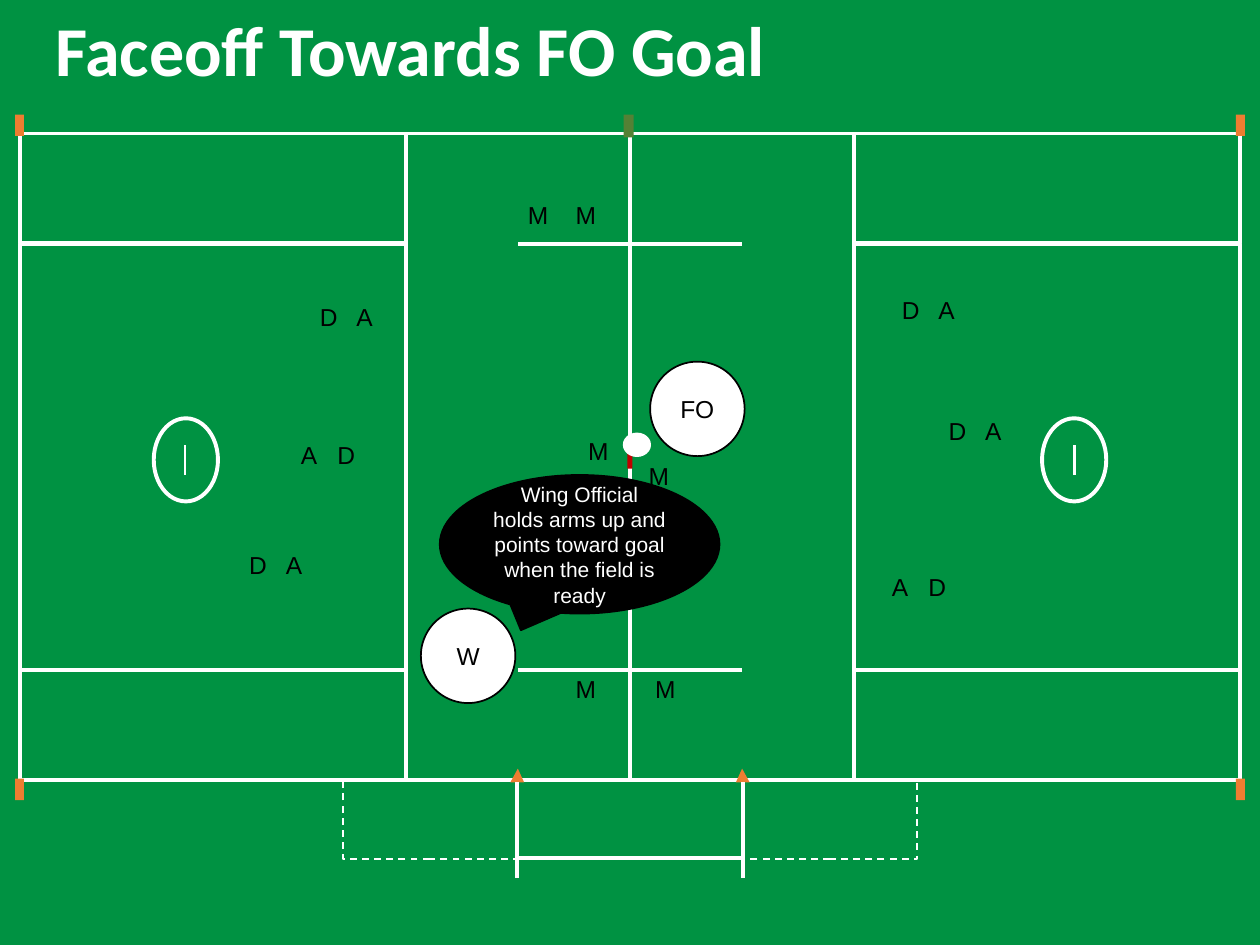
import dataclasses
import lxml.etree
import pptx
import pptx.dml.color
import pptx.enum.dml
import pptx.enum.shapes
import pptx.enum.text
import pptx.oxml.ns
import pptx.util

KIND = pptx.enum.shapes.MSO_SHAPE
ALIGN = pptx.enum.text.PP_ALIGN
ANCHOR = pptx.enum.text.MSO_ANCHOR
FIT = pptx.enum.text.MSO_AUTO_SIZE
DASH = pptx.enum.dml.MSO_LINE.DASH
QN = pptx.oxml.ns.qn


@dataclasses.dataclass
class Theme:
    turf: str = "009242"
    white: str = "FFFFFF"
    black: str = "000000"
    cone: str = "ED7D31"
    bench: str = "548135"
    spot: str = "C00000"
    title: dict = dataclasses.field(
        default_factory=lambda: dict(name="Calibri", size=pptx.util.Pt(40), bold=True))
    label: dict = dataclasses.field(
        default_factory=lambda: dict(name="Arial", size=pptx.util.Pt(14)))
    note: dict = dataclasses.field(
        default_factory=lambda: dict(name="Arial", size=pptx.util.Pt(12)))


def rgb(code):
    return pptx.dml.color.RGBColor.from_string(code)


class Board:
    """Draws on a grid of 100 columns by 75 rows."""
    COLS, ROWS = 100, 75

    def __init__(self, deck, theme):
        self.theme = theme
        self.cell = deck.slide_width / self.COLS
        self.slide = deck.slides.add_slide(deck.slide_layouts[6])
        self.slide.background.fill.solid()
        self.slide.background.fill.fore_color.rgb = rgb(theme.turf)
        self.shapes = self.slide.shapes

    def grid(self, *cells):
        return [round(n * self.cell) for n in cells]

    def paint(self, shape, fill, edge, width, dash):
        shape.shadow.inherit = False
        if fill:
            shape.fill.solid()
            shape.fill.fore_color.rgb = rgb(fill)
        else:
            shape.fill.background()
        if edge:
            self.stroke(shape.line, edge, width, dash)
        else:
            shape.line.fill.background()

    def stroke(self, line, edge, width, dash=None):
        line.color.rgb = rgb(edge)
        line.width = pptx.util.Pt(width)
        if dash:
            line.dash_style = dash

    def shape(self, kind, at, fill=None, edge=None, width=1, dash=None):
        shape = self.shapes.add_shape(kind, *self.grid(*at))
        self.paint(shape, fill, edge, width, dash)
        return shape

    def line(self, start, end, width=2.25):
        line = self.shapes.add_connector(
            pptx.enum.shapes.MSO_CONNECTOR.STRAIGHT, *self.grid(*start, *end))
        self.stroke(line.line, self.theme.white, width)
        lxml.etree.SubElement(line._element.spPr, QN("a:effectLst"))

    def poly(self, dots, fill):
        first, *rest = [self.grid(*dot) for dot in dots]
        edge = self.shapes.build_freeform(*first)
        edge.add_line_segments(rest, close=True)
        self.paint(edge.convert_to_shape(), fill, None, 1, None)

    def letter(self, shape, text, style, color, align=ALIGN.LEFT,
               anchor=ANCHOR.MIDDLE, fit=FIT.NONE, lead=None, tab=None):
        frame = shape.text_frame
        for key, val in dict(word_wrap=True, auto_size=fit,
                             vertical_anchor=anchor).items():
            setattr(frame, key, val)
        para = frame.paragraphs[0]
        for key, val in dict(alignment=align, line_spacing=lead).items():
            setattr(para, key, val)
        if tab:
            stops = lxml.etree.SubElement(para._p.get_or_add_pPr(), QN("a:tabLst"))
            lxml.etree.SubElement(stops, QN("a:tab"),
                                  pos=str(self.grid(tab)[0]), algn="l")
        run = para.add_run()
        run.text = text
        for key, val in style.items():
            setattr(run.font, key, val)
        run.font.color.rgb = rgb(color)

    def text(self, at, text, style, color, **form):
        box = self.shapes.add_textbox(*self.grid(*at))
        self.letter(box, text, style, color, **form)

    def label(self, left, top, wide, text, tab=None):
        self.text((left, top, wide, 3.4), text, self.theme.label, self.theme.black,
                  anchor=ANCHOR.TOP, fit=FIT.SHAPE_TO_FIT_TEXT, tab=tab)

    def badge(self, left, top, text):
        disc = self.shape(KIND.OVAL, (left, top, 7.5, 7.5),
                          self.theme.white, self.theme.black)
        self.letter(disc, text, self.theme.label, self.theme.black, ALIGN.CENTER)


def half(board, flip):
    """One half of the field; the right half mirrors the left."""
    theme = board.theme

    def turn(x, wide=0):
        return board.COLS - x - wide if flip else x

    def rect(left, top, wide, high, **look):
        board.shape(KIND.RECTANGLE, (turn(left, wide), top, wide, high), **look)

    chalk = dict(edge=theme.white, width=2.25)
    # Midfield, wing and goal areas
    rect(32.2, 10.6, 17.8, 51.3, **chalk)
    for top, high in ((10.6, 8.7), (53.2, 8.7), (19.4, 33.8)):
        rect(1.6, top, 30.6, high, **chalk)
    # Corner pylons
    for top in (9.1, 61.8):
        rect(1.2, top, 0.7, 1.7, fill=theme.cone)
    # Bench area and its cone
    rect(27.2, 62, 13.8, 6.2, edge=theme.white, dash=DASH)
    board.poly([(turn(x), y) for x, y in ((41.1, 61), (41.6, 62.1), (40.5, 62.1))],
               theme.cone)
    # Crease and goal line
    board.shape(KIND.OVAL, (turn(12.2, 5.1), 33.2, 5.1, 6.6), **chalk)
    board.line((turn(14.7), 37.7), (turn(14.7), 35.3), 1.5)
    # Substitution box and wing lines
    board.line((turn(41), 69.7), (turn(41), 62.1))
    for y in (53.2, 19.4, 68.1):
        board.line((50, y), (turn(41.1), y))


def main():
    deck = pptx.Presentation()
    deck.slide_width, deck.slide_height = pptx.util.Inches(10), pptx.util.Inches(7.5)
    theme = Theme()
    board = Board(deck, theme)

    # Field
    for flip in (False, True):
        half(board, flip)
    board.shape(KIND.RECTANGLE, (49.5, 9.1, 0.8, 1.8), theme.bench)
    board.shape(KIND.RECTANGLE, (49.8, 35.7, 0.4, 1.5), theme.spot)

    # Title
    board.text((3.4, 2.3, 58.7, 3.9), "Faceoff Towards FO Goal",
               theme.title, theme.white, lead=0.9)

    # Officials
    board.badge(51.6, 28.7, "FO")
    board.badge(33.4, 48.3, "W")

    # Attack and defense pairs
    for left, top, pair in ((24.4, 23.5, "DA"), (22.9, 34.4, "AD"), (18.8, 43.2, "DA"),
                            (74.3, 32.5, "DA"), (69.8, 44.9, "AD"), (70.6, 22.9, "DA")):
        board.label(left, top, 7.3, "\t".join(pair), tab=2.9)

    # Midfielders and ball
    for left, top in ((40.9, 15.4), (44.7, 15.4), (51, 53), (44.7, 53),
                      (45.7, 34.1), (50.5, 36.1)):
        board.label(left, top, 4.8, "M")
    board.shape(KIND.OVAL, (49.5, 34.4, 2.1, 1.8), theme.white, theme.white)

    # Wing official's callout
    call = board.shape(KIND.OVAL_CALLOUT, (34.9, 37.7, 22.2, 11),
                       theme.black, theme.black)
    call.adjustments[0], call.adjustments[1] = -0.21, 0.62
    board.letter(call, "Wing Official holds arms up and points toward goal "
                 "when the field is ready", theme.note, theme.white, ALIGN.CENTER)

    deck.save("out.pptx")


if __name__ == "__main__":
    main()
